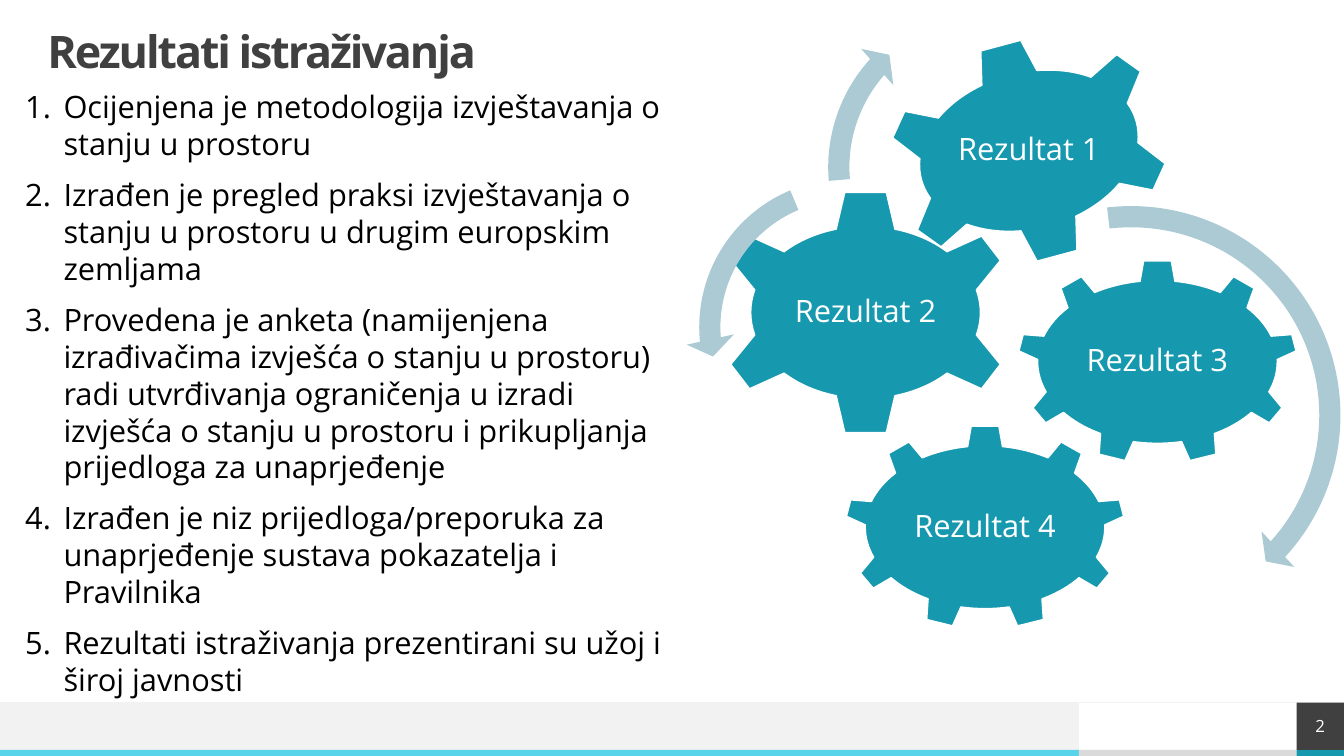
from pptx import Presentation
from pptx.dml.color import RGBColor
from pptx.enum import shapes, text
from pptx.oxml.ns import qn
from pptx.util import Inches, Pt

TEAL = RGBColor(0x16, 0x98, 0xAF)
CYAN = RGBColor(0x58, 0xD4, 0xEA)
PALE_BLUE = RGBColor(0xAC, 0xCA, 0xD4)
DARK = RGBColor(0x40, 0x40, 0x40)
MID_GREY = RGBColor(0xDA, 0xDA, 0xDA)
LIGHT_GREY = RGBColor(0xF2, 0xF2, 0xF2)
BLACK = RGBColor(0, 0, 0)
WHITE = RGBColor(0xFF, 0xFF, 0xFF)
FONT = "Open Sans"
SHAPE = shapes.MSO_SHAPE
MIDDLE = text.MSO_ANCHOR.MIDDLE
CENTER = text.PP_ALIGN.CENTER

RESULTS = [
    "Ocijenjena je metodologija izvještavanja o stanju u prostoru",
    "Izrađen je pregled praksi izvještavanja o stanju u prostoru u drugim europskim zemljama",
    "Provedena je anketa (namijenjena izrađivačima izvješća o stanju u prostoru) radi "
    "utvrđivanja ograničenja u izradi izvješća o stanju u prostoru i prikupljanja "
    "prijedloga za unaprjeđenje",
    "Izrađen je niz prijedloga/preporuka za unaprjeđenje sustava pokazatelja i Pravilnika",
    "Rezultati istraživanja prezentirani su užoj i široj javnosti",
]


def inches(box):
    return [Inches(v) for v in box]


def set_font(p, size, color, bold=False):
    p.font.name, p.font.size, p.font.bold = FONT, Pt(size), bold
    p.font.color.rgb = color


def set_frame(tf, margin=0, anchor=text.MSO_ANCHOR.TOP):
    tf.word_wrap = True
    tf.auto_size = text.MSO_AUTO_SIZE.NONE
    tf.vertical_anchor = anchor
    tf.margin_left = tf.margin_right = tf.margin_top = tf.margin_bottom = Inches(margin)


def add_filled(s, kind, box, fill, outline=None):
    sp = s.shapes.add_shape(kind, *inches(box))
    sp.shadow.inherit = False
    sp.fill.solid()
    sp.fill.fore_color.rgb = fill
    if outline is None:
        sp.line.fill.background()
    else:
        sp.line.color.rgb = outline
        sp.line.width = Pt(1)
    return sp


def add_footer(s, left, top, width, height, number):
    strip, square, split = 0.06, 0.47, 10.7
    right, strip_top = left + width - square, top + height - strip
    add_filled(s, SHAPE.RECTANGLE, (left, top, split, height - strip), LIGHT_GREY)
    for start, end, color in ((left, split, CYAN), (split, right, MID_GREY),
                              (right, left + width, TEAL)):
        add_filled(s, SHAPE.RECTANGLE, (start, strip_top, end - start, strip), color)

    rule = s.shapes.add_connector(shapes.MSO_CONNECTOR.STRAIGHT,
                                  *inches((left, top, left + width, top)))
    rule.line.color.rgb = LIGHT_GREY
    rule.line.width = Pt(0.5)
    sp_pr = rule._element.spPr
    sp_pr.append(sp_pr.makeelement(qn("a:effectLst"), {}))

    sp = add_filled(s, SHAPE.RECTANGLE, (right, top, square, square), DARK)
    set_frame(sp.text_frame, anchor=MIDDLE)
    p = sp.text_frame.paragraphs[0]
    p.text, p.alignment = number, CENTER
    set_font(p, 12, WHITE)


def add_title(s, box, title):
    sp = s.shapes.title
    sp.left, sp.top, sp.width, sp.height = inches(box)
    set_frame(sp.text_frame, anchor=MIDDLE)
    p = sp.text_frame.paragraphs[0]
    p.text, p.alignment, p.line_spacing = title, text.PP_ALIGN.LEFT, 0.9
    set_font(p, 32, DARK, bold=True)
    p.runs[0]._r.get_or_add_rPr().set("spc", "-150")


def add_numbered_list(s, box, items):
    tf = s.shapes.add_textbox(*inches(box)).text_frame
    set_frame(tf)
    for i, item in enumerate(items):
        p = tf.paragraphs[0] if i == 0 else tf.add_paragraph()
        p.text = item
        if i:
            p.space_before = Pt(10)
        p_pr = p._p.get_or_add_pPr()
        p_pr.set("marL", str(Inches(0.38)))
        p_pr.set("indent", str(-Inches(0.38)))
        p_pr.append(p_pr.makeelement(qn("a:buFont"), {"typeface": "+mj-lt"}))
        p_pr.append(p_pr.makeelement(qn("a:buAutoNum"), {"type": "arabicPeriod"}))
        set_font(p, 22, BLACK)


def add_gear(s, kind, box, label, rotation=0):
    """Draw a gear with a level label centred on it."""
    add_filled(s, kind, box, TEAL, WHITE).rotation = rotation
    left, top, width, height = box
    label_w, label_h = 1.7, 1.2
    label_box = (left + (width - label_w) / 2, top + (height - label_h) / 2, label_w, label_h)
    tf = s.shapes.add_textbox(*inches(label_box)).text_frame
    set_frame(tf, 0.03, MIDDLE)
    p = tf.paragraphs[0]
    p.text, p.alignment, p.line_spacing = label, CENTER, 0.9
    set_font(p, 22, WHITE)


def add_arc_arrow(s, kind, left, top, size, head, end, start):
    """Draw an arc arrow; head, end and start are angles in degrees."""
    sp = add_filled(s, kind, (left, top, size, size), PALE_BLUE)
    band, head_half = 0.21 / size, 0.24 / size
    per_degree = 0.6  # 60000 units a degree, 100000 units to 1
    values = (band, head * per_degree, end * per_degree, start * per_degree, head_half)
    for i, value in enumerate(values):
        sp.adjustments[i] = value


def add_gear_diagram(s, left, top):
    add_gear(s, SHAPE.GEAR_9, (left + 3.29, top + 2.58, 2.78, 2.02), "Rezultat 3")
    add_gear(s, SHAPE.GEAR_6, (left + 0.28, top + 1.88, 3.01, 2.44), "Rezultat 2")
    add_gear(s, SHAPE.GEAR_6, (left + 1.97, top + 0.39, 2.87, 2.21), "Rezultat 1", 345)
    add_arc_arrow(s, SHAPE.CIRCULAR_ARROW, left + 2.21, top + 1.91, 4.42, 4.98, 42.4, 263.38)
    add_arc_arrow(s, SHAPE.LEFT_CIRCULAR_ARROW, left, top + 1.64, 3.21, 7.17, 174.82, 247.3)
    add_arc_arrow(s, SHAPE.CIRCULAR_ARROW, left + 1.28, top - 0.07, 3.46, 6.57, 221.9, 175.14)
    add_gear(s, SHAPE.GEAR_9, (left + 1.58, top + 4.22, 2.78, 2.02), "Rezultat 4")


def main():
    prs = Presentation()
    prs.slide_width, prs.slide_height = Inches(13.33), Inches(7.5)
    s = prs.slides.add_slide(prs.slide_layouts[5])
    add_footer(s, 0, 6.97, 13.33, 0.53, "2")
    add_title(s, (0.47, 0.3, 4.68, 0.47), "Rezultati istraživanja")
    add_numbered_list(s, (0.25, 0.87, 6.41, 6.1), RESULTS)
    add_gear_diagram(s, 6.8, 0)
    prs.save("out.pptx")


if __name__ == "__main__":
    main()
